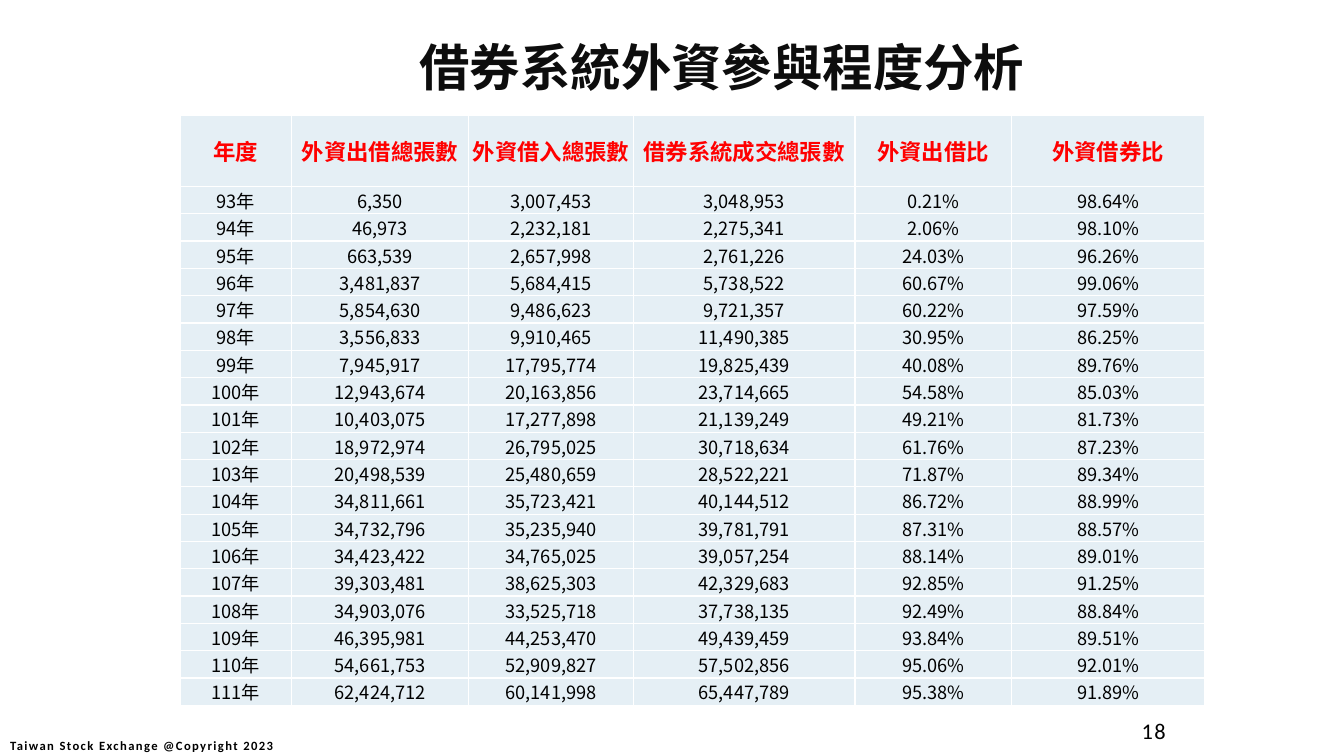
import pptx
import pptx.util
import pptx.dml.color
import pptx.enum.text
import pptx.oxml.ns
from lxml import etree

Inches = pptx.util.Inches
Pt = pptx.util.Pt
ALIGN = pptx.enum.text.PP_ALIGN
ANCHOR = pptx.enum.text.MSO_ANCHOR
qn = pptx.oxml.ns.qn

COLORS = {"title": "0D0D0D", "heading": "FF0000", "body": "000000",
          "cell": "0066A0", "border": "FFFFFF"}
CJK = "Noto Sans CJK SC"
LATIN = "Calibri"


def add_run(paragraph, text, size, color, font, bold=False, spacing=0):
    run = paragraph.add_run()
    run.text = text
    run.font.size = Pt(size)
    run.font.bold = bold
    run.font.color.rgb = pptx.dml.color.RGBColor.from_string(COLORS[color])
    run.font.name = font
    properties = run.font._element
    etree.SubElement(properties, qn("a:ea")).set("typeface", font)
    if spacing:
        properties.set("spc", str(spacing * 100))


def style_cell(cell):
    cell.margin_left = cell.margin_top = cell.margin_right = Inches(0.01)
    cell.margin_bottom = 0
    properties = cell._tc.get_or_add_tcPr()
    for side in ("a:lnL", "a:lnR", "a:lnT", "a:lnB"):
        border = etree.SubElement(properties, qn(side), w=str(Pt(1)))
        border_fill = etree.SubElement(border, qn("a:solidFill"))
        etree.SubElement(border_fill, qn("a:srgbClr"), val=COLORS["border"])
    cell.fill.solid()
    cell.fill.fore_color.rgb = pptx.dml.color.RGBColor.from_string(COLORS["cell"])
    cell_color = properties.find(qn("a:solidFill")).find(qn("a:srgbClr"))
    etree.SubElement(cell_color, qn("a:alpha"), val="10000")


presentation = pptx.Presentation()
presentation.slide_width = Inches(13.33)
presentation.slide_height = Inches(7.5)
slide = presentation.slides.add_slide(presentation.slide_layouts[5])

title = slide.shapes.title
title.left, title.top = Inches(1.66), Inches(0.19)
title.width, title.height = Inches(11), Inches(1.1)
title.text_frame.word_wrap = True
title.text_frame.vertical_anchor = ANCHOR.TOP
heading = title.text_frame.paragraphs[0]
heading.alignment = ALIGN.CENTER
heading.line_spacing = 1.2
add_run(heading, "借券系統外資參與程度分析", 36, "title", CJK, bold=True)

footers = [
    ("Taiwan Stock Exchange @Copyright 2023", -0.14, 7.2, 3.09, 0.4, ALIGN.CENTER, 9, True),
    ("18", 9.58, 7, 2.08, 0.5, ALIGN.RIGHT, 16, False),
]
for text, left, top, width, height, alignment, size, bold in footers:
    footer = slide.shapes.add_textbox(Inches(left), Inches(top), Inches(width), Inches(height))
    footer.text_frame.word_wrap = True
    footer.text_frame.vertical_anchor = ANCHOR.MIDDLE
    footer_line = footer.text_frame.paragraphs[0]
    footer_line.alignment = alignment
    add_run(footer_line, text, size, "body", LATIN, bold, spacing=1)

headers = ["年度", "外資出借總張數", "外資借入總張數", "借券系統成交總張數", "外資出借比", "外資借券比"]
lending = [
    ("6,350", "3,007,453", "3,048,953", "0.21%", "98.64%"),
    ("46,973", "2,232,181", "2,275,341", "2.06%", "98.10%"),
    ("663,539", "2,657,998", "2,761,226", "24.03%", "96.26%"),
    ("3,481,837", "5,684,415", "5,738,522", "60.67%", "99.06%"),
    ("5,854,630", "9,486,623", "9,721,357", "60.22%", "97.59%"),
    ("3,556,833", "9,910,465", "11,490,385", "30.95%", "86.25%"),
    ("7,945,917", "17,795,774", "19,825,439", "40.08%", "89.76%"),
    ("12,943,674", "20,163,856", "23,714,665", "54.58%", "85.03%"),
    ("10,403,075", "17,277,898", "21,139,249", "49.21%", "81.73%"),
    ("18,972,974", "26,795,025", "30,718,634", "61.76%", "87.23%"),
    ("20,498,539", "25,480,659", "28,522,221", "71.87%", "89.34%"),
    ("34,811,661", "35,723,421", "40,144,512", "86.72%", "88.99%"),
    ("34,732,796", "35,235,940", "39,781,791", "87.31%", "88.57%"),
    ("34,423,422", "34,765,025", "39,057,254", "88.14%", "89.01%"),
    ("39,303,481", "38,625,303", "42,329,683", "92.85%", "91.25%"),
    ("34,903,076", "33,525,718", "37,738,135", "92.49%", "88.84%"),
    ("46,395,981", "44,253,470", "49,439,459", "93.84%", "89.51%"),
    ("54,661,753", "52,909,827", "57,502,856", "95.06%", "92.01%"),
    ("62,424,712", "60,141,998", "65,447,789", "95.38%", "91.89%"),
]
rows = [headers] + [(f"{year}年", *figures) for year, figures in enumerate(lending, 93)]
column_widths = [1.1, 1.76, 1.63, 2.2, 1.55, 1.92]
table_height, header_height = 5.86, 0.71

participation = slide.shapes.add_table(
    len(rows), len(headers), Inches(1.79), Inches(1.14),
    Inches(sum(column_widths)), Inches(table_height)).table
participation.horz_banding = False
for column, width in zip(participation.columns, column_widths):
    column.width = Inches(width)
for row in participation.rows:
    row.height = Inches((table_height - header_height) / len(lending))
participation.rows[0].height = Inches(header_height)

for row_index, values in enumerate(rows):
    is_header = row_index == 0
    for column_index, value in enumerate(values):
        cell = participation.cell(row_index, column_index)
        style_cell(cell)
        cell.vertical_anchor = ANCHOR.MIDDLE if is_header else ANCHOR.TOP
        entry = cell.text_frame.paragraphs[0]
        entry.alignment = ALIGN.CENTER
        if is_header:
            add_run(entry, value, 16, "heading", CJK, bold=True)
        else:
            add_run(entry, value, 13, "body", CJK)

presentation.save("out.pptx")
